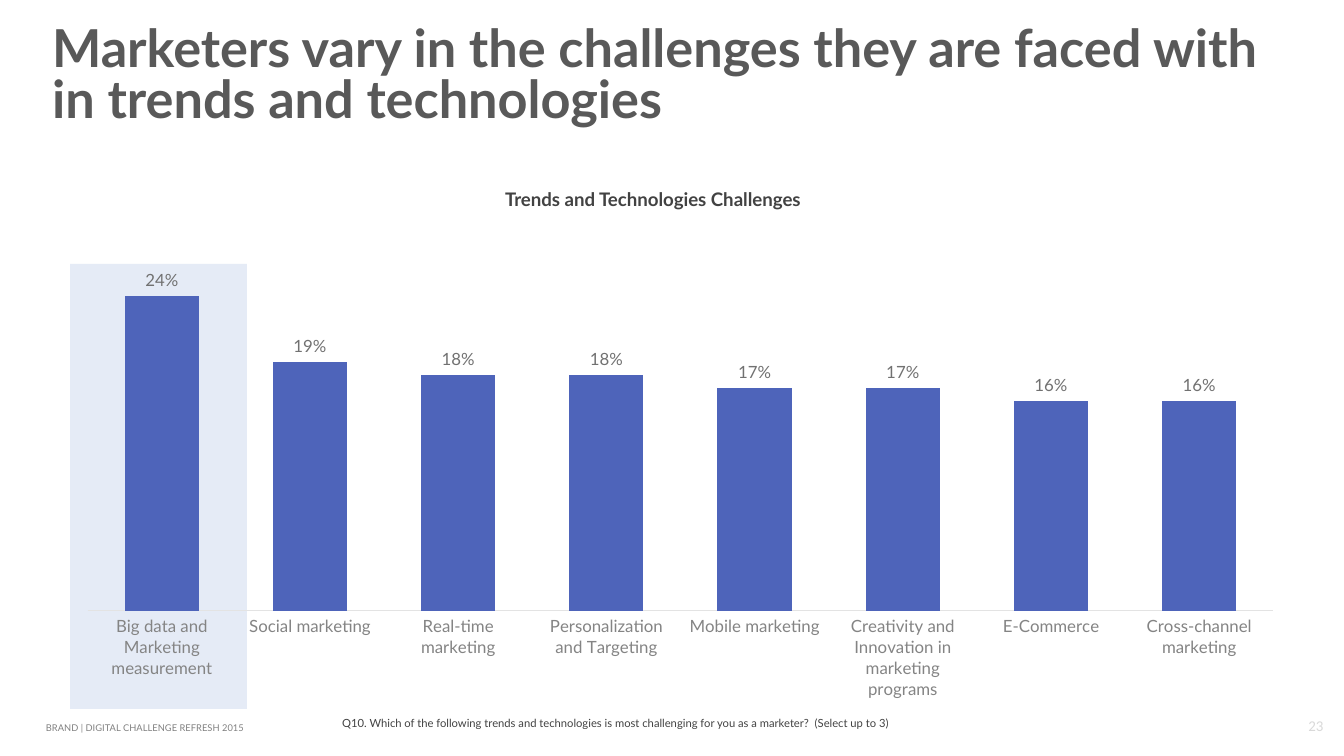
from lxml.etree import SubElement
from pptx import Presentation
from pptx.chart.data import CategoryChartData
from pptx.dml.color import RGBColor
from pptx.enum.chart import XL_CHART_TYPE, XL_LABEL_POSITION, XL_TICK_MARK
from pptx.enum.shapes import MSO_SHAPE
from pptx.enum.text import MSO_ANCHOR, PP_ALIGN
from pptx.oxml import parse_xml
from pptx.oxml.ns import nsdecls, qn
from pptx.util import Pt

PX = 914400 / 134.4
THEME = {
    "font": "Lato", "number_font": "Calibri", "chart_font": "Cabin",
    "title": "595959", "body": "424242", "footer": "808080", "number": "D9D9D9",
    "bar": "4E64BA", "highlight": "CCD8EE", "axis": "E3E3E3",
    "category": "848484", "value": "717171",
    "title_size": 28, "heading_size": 10, "label_size": 9,
    "number_size": 8, "note_size": 6, "footer_size": 5,
}


def box(*lengths):
    return [round(length * PX) for length in lengths]


def add_text(place, text, role, size, font="font", bold=False, inset=True,
             anchor=MSO_ANCHOR.TOP, align=PP_ALIGN.LEFT, spacing=None):
    frame = slide.shapes.add_textbox(*box(*place)).text_frame
    frame.word_wrap = True
    frame.vertical_anchor = anchor
    if not inset:
        frame.margin_left = frame.margin_right = 0
        frame.margin_top = frame.margin_bottom = 0
    frame.text = text
    paragraph = frame.paragraphs[0]
    paragraph.alignment = align
    paragraph.line_spacing = spacing
    style = paragraph.runs[0].font
    style.name = THEME[font]
    style.size = Pt(THEME[size])
    style.bold = bold
    style.color.rgb = RGBColor.from_string(THEME[role])


deck = Presentation()
deck.slide_width, deck.slide_height = box(1344, 756)
slide = deck.slides.add_slide(deck.slide_layouts[6])

add_text((1297, 718, 38, 17), "23", "number", "number_size", font="number_font",
         inset=False, anchor=MSO_ANCHOR.BOTTOM, align=PP_ALIGN.CENTER)
add_text((46, 722, 559, 11), "BRAND | DIGITAL CHALLENGE REFRESH 2015", "footer",
         "footer_size", inset=False, anchor=MSO_ANCHOR.MIDDLE)

highlight = slide.shapes.add_shape(MSO_SHAPE.RECTANGLE, *box(70, 264, 177, 445))
highlight.shadow.inherit = False
highlight.line.fill.background()
highlight.fill.solid()
highlight.fill.fore_color.rgb = RGBColor.from_string(THEME["highlight"])
tint = highlight.fill._xPr.find(".//" + qn("a:srgbClr"))
SubElement(tint, qn("a:alpha")).set("val", "50000")

add_text((39, 21, 1277, 114),
         "Marketers vary in the challenges they are faced with in trends and technologies",
         "title", "title_size", bold=True, anchor=MSO_ANCHOR.MIDDLE, spacing=0.8)
add_text((329, 710, 737, 27),
         "Q10. Which of the following trends and technologies is most challenging "
         "for you as a marketer?  (Select up to 3)", "body", "note_size")
add_text((505, 188, 333, 23), "Trends and Technologies Challenges", "body",
         "heading_size", bold=True, inset=False)

challenges = {
    "Big data and Marketing measurement": 0.24,
    "Social marketing": 0.19,
    "Real-time marketing": 0.18,
    "Personalization and Targeting": 0.18,
    "Mobile marketing": 0.17,
    "Creativity and Innovation in marketing programs": 0.17,
    "E-Commerce": 0.16,
    "Cross-channel marketing": 0.16,
}
shares = CategoryChartData(number_format="0%")
shares.categories = list(challenges)
shares.add_series("Series 1", list(challenges.values()))
chart = slide.shapes.add_chart(XL_CHART_TYPE.COLUMN_CLUSTERED,
                               *box(63, 214, 1235, 496), shares).chart
chart.has_legend = False
chart.has_title = False
chart.font.name = THEME["chart_font"]
chart.font.size = Pt(THEME["heading_size"])
chart.font.color.rgb = RGBColor.from_string(THEME["body"])

share_axis = chart.value_axis
share_axis.visible = False
share_axis.has_major_gridlines = False
share_axis.minimum_scale = 0
share_axis.maximum_scale = 0.28

challenge_axis = chart.category_axis
challenge_axis.major_tick_mark = XL_TICK_MARK.NONE
challenge_axis.format.line.color.rgb = RGBColor.from_string(THEME["axis"])
challenge_axis.format.line.width = Pt(0.75)

plot = chart.plots[0]
plot.gap_width = 100
plot.vary_by_categories = False
bars = plot.series[0].format.fill
bars.solid()
bars.fore_color.rgb = RGBColor.from_string(THEME["bar"])
plot.has_data_labels = True
share_labels = plot.data_labels
share_labels.show_value = True
share_labels.number_format = "0%"
share_labels.number_format_is_linked = False
share_labels.position = XL_LABEL_POSITION.OUTSIDE_END

for style, role in ((challenge_axis.tick_labels.font, "category"),
                    (share_labels.font, "value")):
    style.name = THEME["font"]
    style.size = Pt(THEME["label_size"])
    style.color.rgb = RGBColor.from_string(THEME[role])

plot_area = chart._chartSpace.chart.plotArea
for old_layout in plot_area.findall(qn("c:layout")):
    plot_area.remove(old_layout)
plot_area.insert(0, parse_xml(
    f'<c:layout {nsdecls("c")}><c:manualLayout><c:layoutTarget val="inner"/>'
    '<c:xMode val="edge"/><c:yMode val="edge"/><c:x val="0.02"/><c:y val="0.06"/>'
    '<c:w val="0.96"/><c:h val="0.74"/></c:manualLayout></c:layout>'))

deck.save("out.pptx")
